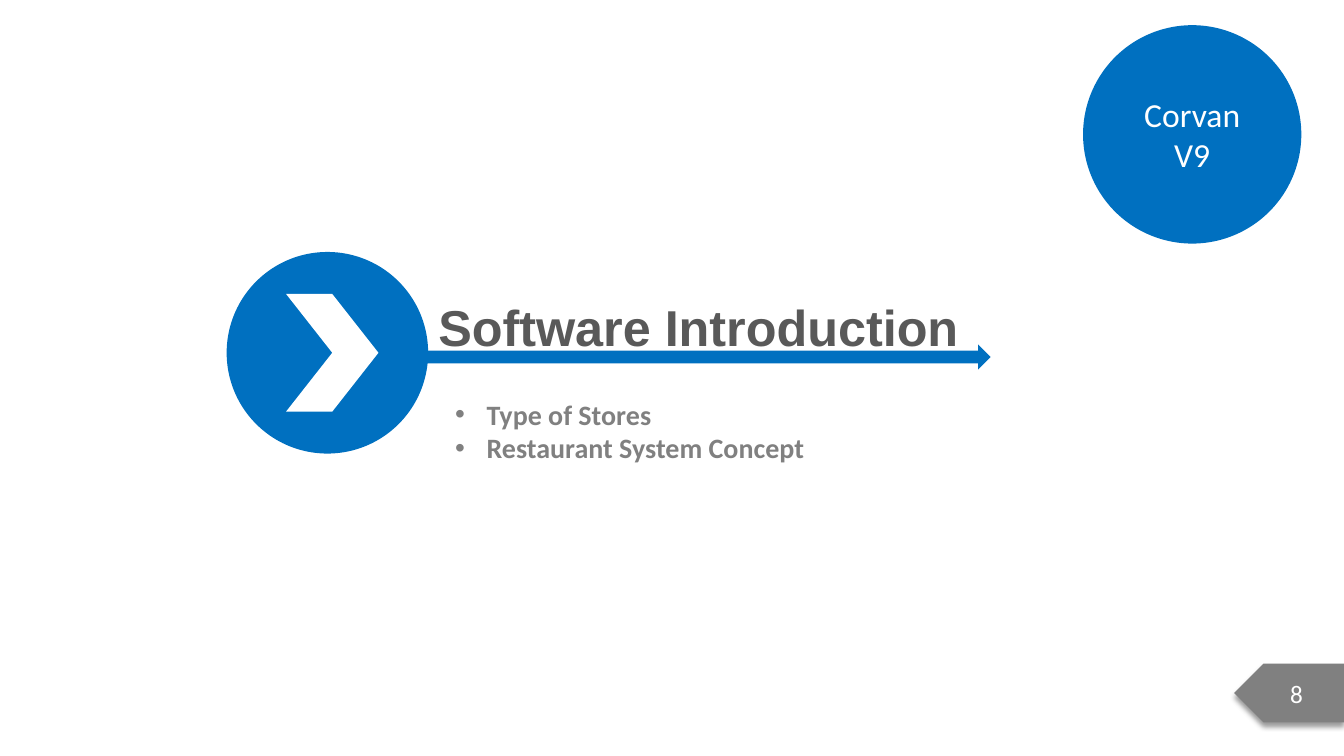
from lxml import etree
from pptx import Presentation
from pptx.dml.color import RGBColor
from pptx.enum.shapes import MSO_SHAPE
from pptx.enum.text import MSO_ANCHOR, MSO_AUTO_SIZE, PP_ALIGN
from pptx.oxml.ns import qn
from pptx.util import Pt

OVAL = MSO_SHAPE.OVAL
CHEVRON = MSO_SHAPE.CHEVRON
ARROW = MSO_SHAPE.RIGHT_ARROW
PLATE = MSO_SHAPE.PENTAGON
MIDDLE, TOP = MSO_ANCHOR.MIDDLE, MSO_ANCHOR.TOP
CENTER, LEFT = PP_ALIGN.CENTER, PP_ALIGN.LEFT
NO_FIT = MSO_AUTO_SIZE.NONE

BLUE = RGBColor(0x00, 0x70, 0xC0)
WHITE = RGBColor(0xFF, 0xFF, 0xFF)
DARK = RGBColor(0x59, 0x59, 0x59)
GRAY = RGBColor(0x80, 0x80, 0x80)


class Deck:
    """Hold the text style and the current slide, and add elements to it."""

    body_font = "Calibri"
    title_font = "Arial"

    def __init__(self, width, height):
        """Open a deck with one title and content slide."""
        self.deck = Presentation()
        self.deck.slide_width = Pt(width)
        self.deck.slide_height = Pt(height)
        self.slide = self.deck.slides.add_slide(self.deck.slide_layouts[1])

    def style(self, para, size, color, face, bold=False):
        """Format every run of a paragraph."""
        for run in para.runs:
            run.font.size = Pt(size)
            run.font.name = face
            run.font.bold = bold
            run.font.color.rgb = color

    def place(self, holder, box, text):
        """Move a placeholder to a box and fill it with text."""
        holder.left, holder.top, holder.width, holder.height = map(Pt, box)
        frame = holder.text_frame
        frame.text = text
        frame.word_wrap = True
        frame.auto_size = NO_FIT
        frame.vertical_anchor = TOP
        for para in frame.paragraphs:
            para.alignment = LEFT
            para.space_before = Pt(0)
        return frame.paragraphs

    def title(self, text, box):
        """Set the slide title."""
        para = self.place(self.slide.shapes.title, box, text)[0]
        para.line_spacing = 1.5
        self.style(para, 36, DARK, self.title_font, True)

    def bullets(self, items, box, indent):
        """Set the bullet list in the body placeholder."""
        holder = self.slide.placeholders[1]
        for para in self.place(holder, box, "\n".join(items)):
            props = para._p.get_or_add_pPr()
            props.set("marL", str(Pt(indent)))
            props.set("indent", str(-Pt(indent)))
            etree.SubElement(props, qn("a:buFont"), typeface="Arial")
            etree.SubElement(props, qn("a:buChar"), char="•")
            self.style(para, 20, GRAY, self.body_font, True)

    def shape(self, kind, box, color, text="", size=24):
        """Add a filled shape, with centred white text if given."""
        shape = self.slide.shapes.add_shape(kind, *map(Pt, box))
        shape.shadow.inherit = False
        shape.fill.solid()
        shape.fill.fore_color.rgb = color
        shape.line.fill.background()
        if text:
            frame = shape.text_frame
            frame.text = text
            frame.word_wrap = True
            frame.vertical_anchor = MIDDLE
            para = frame.paragraphs[0]
            para.alignment = CENTER
            self.style(para, size, WHITE, self.body_font)
        return shape

    def page(self, text, box):
        """Add the page tag, pointing left with a soft shadow below."""
        props = self.shape(PLATE, box, GRAY, text, 18)._element.spPr
        props.find(qn("a:xfrm")).set("flipH", "1")
        shade = etree.SubElement(
            props.find(qn("a:effectLst")), qn("a:outerShdw"),
            blurRad=str(Pt(4)), dist=str(Pt(3)), dir="5400000",
            algn="t", rotWithShape="0")
        black = etree.SubElement(shade, qn("a:srgbClr"), val="000000")
        etree.SubElement(black, qn("a:alpha"), val="40000")


def main():
    """Build the section slide."""
    deck = Deck(960.5, 540)
    deck.shape(OVAL, (774, 18, 156, 156), BLUE, "Corvan V9")
    deck.title("Software Introduction", (306, 186, 396, 65))
    deck.shape(OVAL, (162, 180, 144, 144), BLUE)
    deck.shape(CHEVRON, (204.5, 210, 66, 84), WHITE)
    deck.shape(ARROW, (300, 246, 408, 18), BLUE)
    deck.page("8", (882, 474, 78.5, 42))
    deck.bullets(["Type of Stores", "Restaurant System Concept"],
                 (318, 280, 270, 56), 22.5)
    deck.deck.save("out.pptx")


if __name__ == "__main__":
    main()
